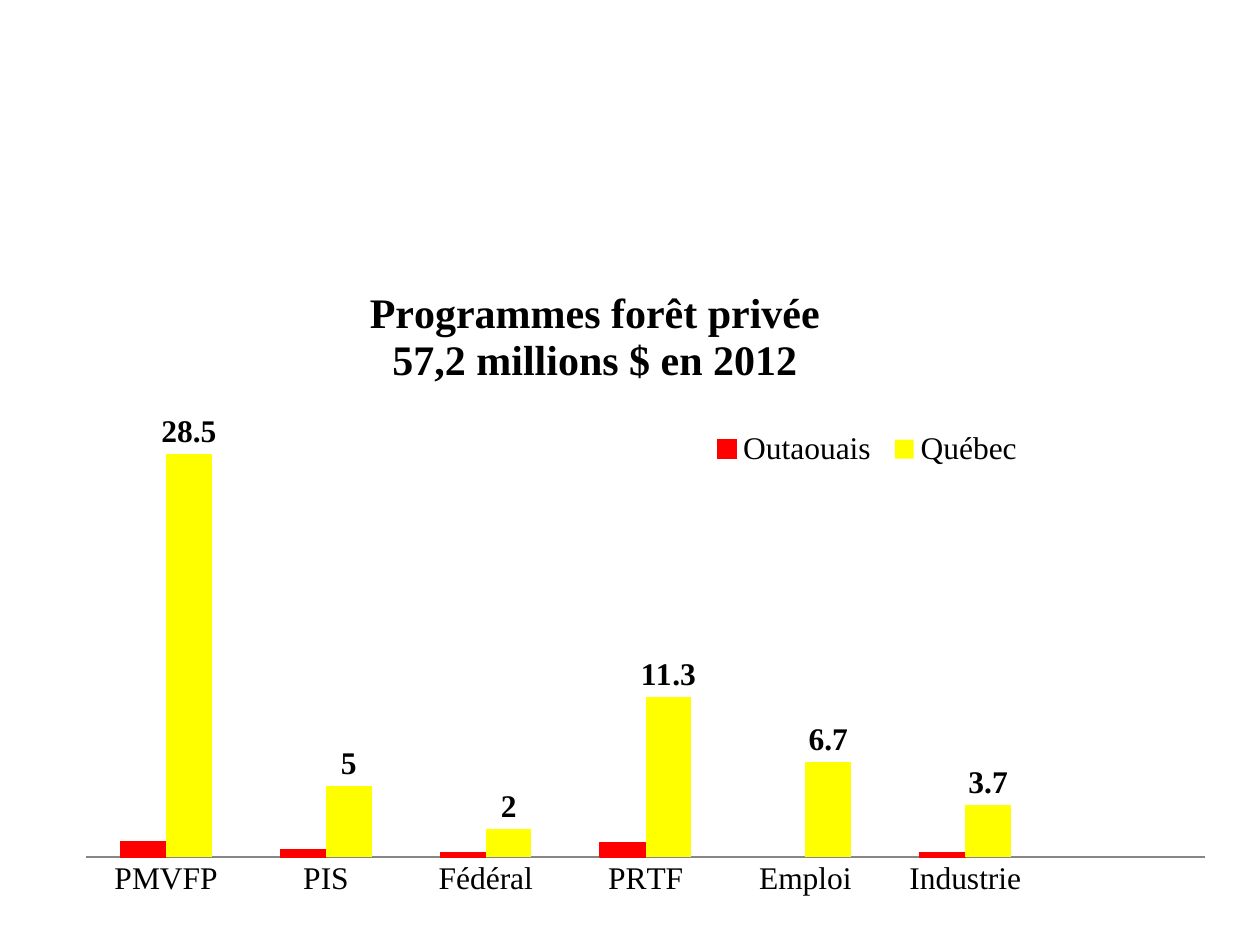
from lxml import etree
from pptx import Presentation
from pptx.chart.data import CategoryChartData
from pptx.dml.color import RGBColor
from pptx.enum import chart as ch
from pptx.oxml import ns
from pptx.util import Inches, Pt

# Content
TITLE = ["Programmes forêt privée", "57,2 millions $ en 2012"]
PROGRAMMES = ["PMVFP", "PIS", "Fédéral", "PRTF", "Emploi", "Industrie", ""]
REGIONS = [
    ("Outaouais", "FF0000", [1.1, 0.5, 0.3, 1, None, 0.3, None]),
    ("Québec", "FFFF00", [28.5, 5, 2, 11.3, 6.7, 3.7, None]),
]
FONT = "Times New Roman"
# Fractions of the chart frame
TITLE_SPOT = {"x": 0.26, "y": 0.07}
LEGEND_SPOT = {"x": 0.55, "y": 0.28, "w": 0.28, "h": 0.07}
PLOT_SPOT = {"x": 0.02, "y": 0.29, "w": 0.96, "h": 0.63}


def color(value):
    return RGBColor.from_string(value)


def style(font, size, bold=False):
    values = {"name": FONT, "size": Pt(size), "bold": bold}
    for key, value in values.items():
        setattr(font, key, value)
    font.color.rgb = color("000000")


def place(part, spot, inner=False):
    """Give a chart part a manual layout."""
    for old in part.findall(ns.qn("c:layout")):
        part.remove(old)
    layout = etree.Element(ns.qn("c:layout"))
    manual = etree.SubElement(layout, ns.qn("c:manualLayout"))
    settings = [("layoutTarget", "inner")] if inner else []
    settings += [(f"{axis}Mode", "edge") for axis in "xy"]
    settings += spot.items()
    for tag, value in settings:
        etree.SubElement(manual, ns.qn(f"c:{tag}")).set("val", str(value))
    overlay = part.find(ns.qn("c:overlay"))
    if overlay is None:
        part.insert(0, layout)
    else:
        overlay.addprevious(layout)


def main():
    prs = Presentation()
    prs.slide_width, prs.slide_height = Inches(10), Inches(7.5)
    slide = prs.slides.add_slide(prs.slide_layouts[6])

    # Chart and its data
    data = CategoryChartData()
    data.categories = PROGRAMMES
    for name, _, amounts in REGIONS:
        data.add_series(name, amounts)
    chart = slide.shapes.add_chart(
        ch.XL_CHART_TYPE.COLUMN_CLUSTERED, Inches(0.5), Inches(1.88),
        Inches(9.25), Inches(5.35), data).chart
    style(chart.font, 18)

    # Title
    chart.has_title = True
    heading = chart.chart_title
    heading.include_in_layout = False
    frame = heading.text_frame
    for number, line in enumerate(TITLE):
        paragraph = frame.add_paragraph() if number else frame.paragraphs[0]
        run = paragraph.add_run()
        run.text = line
        style(paragraph.font, 24, True)
        style(run.font, 24, True)

    # Legend
    chart.has_legend = True
    legend = chart.legend
    legend.position = ch.XL_LEGEND_POSITION.TOP
    legend.include_in_layout = False
    style(legend.font, 18)

    # Axes
    programmes, amounts = chart.category_axis, chart.value_axis
    programmes.major_tick_mark = ch.XL_TICK_MARK.NONE
    programmes.format.line.color.rgb = color("868686")
    style(programmes.tick_labels.font, 18)
    amounts.minimum_scale, amounts.maximum_scale = 0, 30
    amounts.has_major_gridlines = False
    amounts.visible = False

    # Columns
    plot = chart.plots[0]
    plot.gap_width, plot.overlap = 150, 0
    plot.vary_by_categories = False
    for series, (_, fill, _) in zip(plot.series, REGIONS):
        series.format.fill.solid()
        series.format.fill.fore_color.rgb = color(fill)
    outaouais, quebec = plot.series
    outaouais.format.line.color.rgb = color("FF0000")
    outaouais.format.line.width = Pt(0.75)
    labels = quebec.data_labels
    labels.show_value = True
    labels.position = ch.XL_LABEL_POSITION.OUTSIDE_END
    style(labels.font, 18, True)

    # Positions inside the frame
    place(heading._element, TITLE_SPOT)
    place(legend._element, LEGEND_SPOT)
    place(chart._chartSpace.chart.plotArea, PLOT_SPOT, inner=True)

    prs.save("out.pptx")


if __name__ == "__main__":
    main()
